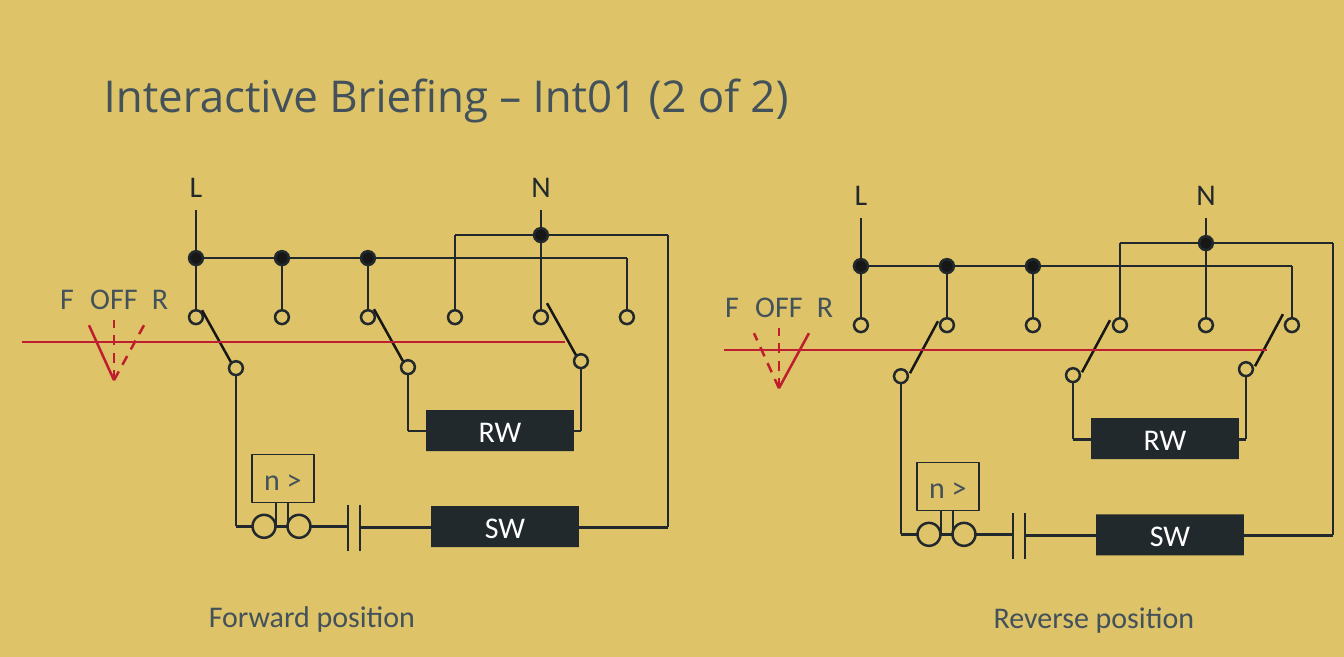
from dataclasses import dataclass
from itertools import pairwise

from lxml import etree
from pptx import Presentation
from pptx.dml.color import RGBColor
from pptx.enum.dml import MSO_LINE_DASH_STYLE as DASH
from pptx.enum.shapes import MSO_CONNECTOR, MSO_SHAPE
from pptx.enum.text import MSO_ANCHOR as ANCHOR, PP_ALIGN as ALIGN
from pptx.oxml.ns import qn
from pptx.slide import Slide
from pptx.util import Pt

EMU_PER_PX = 7620
SAND, INK, BLACK, SLATE, RED, WHITE = (
    "DEC368", "22292D", "181717", "43525A", "BE1E2D", "FFFFFF")

# Local positions shared by both circuits
TERMINALS = [round(196 + 86.2 * i) for i in range(6)]
L_X, N_X = TERMINALS[0], TERMINALS[4]
FEED_Y, NEUTRAL_Y, BUS_Y, TERMINAL_Y = 210, 235, 258, 317
PIVOTS = [(236, 368), (408, 367), (581, 361)]
RW_BOX = (426, 410, 148, 41)
SW_BOX = (431, 506, 148, 41)
RADIUS = 7


@dataclass
class Position:
    """One setting of the switch: linkage ends, blade ends from the pivot, live lever."""
    linkage: tuple
    blade: tuple
    lever: str


FORWARD = Position((22, 565), ((-34, -58), (-5, -6)), "F")
REVERSE = Position((59, 602), ((37, -55), (9, -3)), "R")


def px(value):
    return round(value * EMU_PER_PX)


def color(hex_string):
    return RGBColor.from_string(hex_string)


def write(shape, text, size, hex_color, font="Calibri", align=ALIGN.CENTER,
          anchor=ANCHOR.TOP, spacing=1.0):
    frame = shape.text_frame
    frame.word_wrap = True
    frame.vertical_anchor = anchor
    paragraph = frame.paragraphs[0]
    paragraph.alignment = align
    paragraph.line_spacing = spacing
    run = paragraph.add_run()
    run.text = text
    run.font.size = Pt(size)
    run.font.name = font
    run.font.color.rgb = color(hex_color)


@dataclass
class Area:
    """A part of the slide whose contents are placed from its top left corner."""
    slide: Slide
    left: int = 0
    top: int = 0

    def wire(self, *points, stroke=INK, dash=None):
        """Join the points with straight connectors."""
        for (x1, y1), (x2, y2) in pairwise(points):
            connector = self.slide.shapes.add_connector(
                MSO_CONNECTOR.STRAIGHT, px(self.left + x1), px(self.top + y1),
                px(self.left + x2), px(self.top + y2))
            connector.line.color.rgb = color(stroke)
            connector.line.width = Pt(1.5)
            if dash:
                connector.line.dash_style = dash
            etree.SubElement(connector._element.spPr, qn("a:effectLst"))

    def shape(self, kind, x, y, width, height, fill=None, stroke=None, weight=1.5):
        shape = self.slide.shapes.add_shape(
            kind, px(self.left + x), px(self.top + y), px(width), px(height))
        shape.shadow.inherit = False
        if fill:
            shape.fill.solid()
            shape.fill.fore_color.rgb = color(fill)
        else:
            shape.fill.background()
        if stroke:
            shape.line.color.rgb = color(stroke)
            shape.line.width = Pt(weight)
        else:
            shape.line.fill.background()
        return shape

    def circle(self, x, y, radius=RADIUS, fill=None):
        self.shape(MSO_SHAPE.OVAL, x - radius, y - radius, 2 * radius, 2 * radius,
                   fill, INK)

    def label(self, text, center, y, width=72, hex_color=SLATE):
        box = self.slide.shapes.add_textbox(
            px(self.left + center - width / 2), px(self.top + y), px(width), px(48))
        write(box, text, 18, hex_color)

    def winding(self, name, box):
        rectangle = self.shape(MSO_SHAPE.RECTANGLE, *box, fill=INK)
        write(rectangle, name, 18, WHITE, anchor=ANCHOR.MIDDLE)


def draw_supply(area):
    contact_top = TERMINAL_Y - RADIUS
    for x in (L_X, N_X):
        area.wire((x, FEED_Y), (x, contact_top))
    for x in TERMINALS[1:3]:
        area.wire((x, BUS_Y), (x, contact_top))
    area.wire((L_X, BUS_Y), (TERMINALS[5], BUS_Y), (TERMINALS[5], contact_top))
    area.wire((N_X, NEUTRAL_Y), (TERMINALS[3], NEUTRAL_Y), (TERMINALS[3], contact_top))
    area.wire((N_X, NEUTRAL_Y), (668, NEUTRAL_Y), (668, 527), (579, 527))
    for x in TERMINALS:
        area.circle(x, TERMINAL_Y)
    for x in TERMINALS[:3]:
        area.circle(x, BUS_Y, fill=BLACK)
    area.circle(N_X, NEUTRAL_Y, fill=BLACK)
    area.label("L", L_X, 162, hex_color=INK)
    area.label("N", N_X, 162, hex_color=INK)


def draw_windings(area):
    area.winding("RW", RW_BOX)
    area.winding("SW", SW_BOX)
    ends = [(253, 526), (426, 431), (574, 431)]
    for (x, y), end in zip(PIVOTS, ends):
        area.wire((x, y + RADIUS), (x, end[1]), end)


def draw_start_branch(area):
    """Centrifugal switch and capacitor in front of the start winding."""
    speed = area.shape(MSO_SHAPE.RECTANGLE, 252, 454, 62, 48, stroke=INK, weight=0.75)
    write(speed, "n >", 18, SLATE)
    for x in (264, 299):
        area.circle(x, 526, radius=11.5)
    for x in (276, 288):
        area.wire((x, 503), (x, 527))
    for x in (348, 360):
        area.wire((x, 505), (x, 551))
    area.wire((276, 526), (288, 526))
    area.wire((311, 526), (348, 526))
    area.wire((360, 527), (431, 527))


def draw_switch(area, position):
    for x, y in PIVOTS:
        area.circle(x, y, fill=SAND)
        area.wire(*((x + dx, y + dy) for dx, dy in position.blade), stroke=BLACK)
    area.wire(*((x, 342) for x in position.linkage), stroke=RED)
    levers = [("F", 67, (89, 325)), ("OFF", 114, (114, 320)), ("R", 160, (144, 325))]
    for name, center, end in levers:
        dash = None if name == position.lever else DASH.DASH
        area.wire((114, 380), end, stroke=RED, dash=dash)
        area.label(name, center, 273)


def draw_circuit(area, position):
    draw_supply(area)
    draw_windings(area)
    draw_start_branch(area)
    draw_switch(area, position)


def draw_title(slide, left, top, width, height):
    box = slide.shapes.add_textbox(px(left), px(top), px(width), px(height))
    write(box, "Interactive Briefing – Int01 (2 of 2)", 26.3, SLATE, "Open Sans",
          ALIGN.LEFT, ANCHOR.MIDDLE, 0.9)


def main():
    presentation = Presentation()
    presentation.slide_width, presentation.slide_height = px(1344), px(656.6)
    slide = presentation.slides.add_slide(presentation.slide_layouts[6])
    slide.background.fill.solid()
    slide.background.fill.fore_color.rgb = color(SAND)
    draw_title(slide, 92, 35, 1159, 127)
    draw_circuit(Area(slide), FORWARD)
    draw_circuit(Area(slide, 665, 8), REVERSE)
    captions = Area(slide)
    captions.label("Forward position", 312, 591, width=240)
    captions.label("Reverse position", 1094, 592, width=240)
    presentation.save("out.pptx")


if __name__ == "__main__":
    main()
